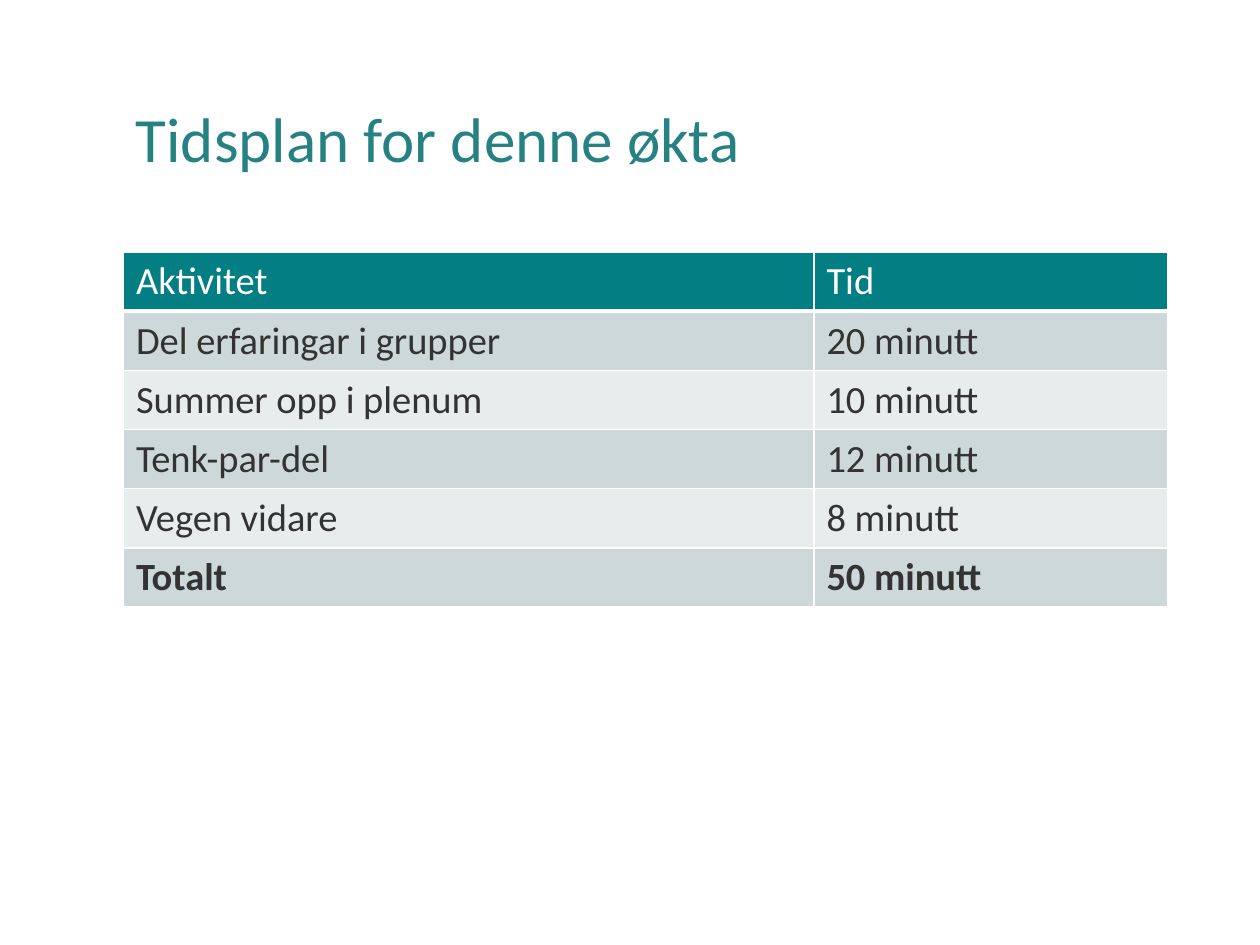
from dataclasses import dataclass

from lxml import etree
from pptx import Presentation
from pptx.dml.color import RGBColor
from pptx.enum.text import MSO_ANCHOR
from pptx.oxml.ns import qn
from pptx.util import Inches, Pt

MIDDLE = MSO_ANCHOR.MIDDLE


@dataclass(frozen=True)
class Theme:
    font: str = "Calibri"
    title_size: int = 36
    table_size: int = 22
    title: str = "268183"
    text: str = "333333"
    header: str = "037F83"
    bands: tuple = ("CCD8D9", "E7ECED")
    white: str = "FFFFFF"
    thin: int = 1
    thick: int = 3


THEME = Theme()
LEFT, WIDTH = 0.98, 8.29
COLUMN_WIDTHS = (5.48, 2.81)
ROW_HEIGHT = 0.47
ROWS = (
    ("Aktivitet", "Tid"),
    ("Del erfaringar i grupper", "20 minutt"),
    ("Summer opp i plenum", "10 minutt"),
    ("Tenk-par-del", "12 minutt"),
    ("Vegen vidare", "8 minutt"),
    ("Totalt", "50 minutt"),
)


def style_text(p, size, color, bold=False):
    p.font.name = THEME.font
    p.font.size = Pt(size)
    p.font.bold = bold
    p.font.color.rgb = RGBColor.from_string(color)


def add_title(slide, text):
    sp = slide.shapes.add_textbox(Inches(LEFT), Inches(0.4), Inches(WIDTH), Inches(1.45))
    tf = sp.text_frame
    tf.word_wrap = True
    tf.vertical_anchor = MIDDLE
    p = tf.paragraphs[0]
    p.text = text
    p.line_spacing = 0.9
    style_text(p, THEME.title_size, THEME.title)


def add_border(cell, side, width):
    tc_pr = cell._tc.get_or_add_tcPr()
    ln = etree.SubElement(tc_pr, qn(f"a:ln{side}"), w=str(Pt(width)))
    fill = etree.SubElement(ln, qn("a:solidFill"))
    etree.SubElement(fill, qn("a:srgbClr"), val=THEME.white)


def fill_cell(cell, text, row):
    is_header = row == 0
    thick_side = {0: "B", 1: "T"}.get(row)
    for side in "LRTB":
        add_border(cell, side, THEME.thick if side == thick_side else THEME.thin)
    background = THEME.header if is_header else THEME.bands[(row - 1) % 2]
    cell.fill.solid()
    cell.fill.fore_color.rgb = RGBColor.from_string(background)
    cell.text = text
    color = THEME.white if is_header else THEME.text
    style_text(cell.text_frame.paragraphs[0], THEME.table_size, color,
               bold=row == len(ROWS) - 1)


def add_schedule(slide):
    frame = slide.shapes.add_table(
        len(ROWS), len(COLUMN_WIDTHS), Inches(LEFT), Inches(2),
        Inches(WIDTH), Inches(ROW_HEIGHT * len(ROWS)))
    table = frame.table
    for column, width in zip(table.columns, COLUMN_WIDTHS):
        column.width = Inches(width)
    for row, texts in enumerate(ROWS):
        for col, text in enumerate(texts):
            fill_cell(table.cell(row, col), text, row)


def main():
    prs = Presentation()
    prs.slide_width, prs.slide_height = Inches(10), Inches(7.5)
    slide = prs.slides.add_slide(prs.slide_layouts[6])
    add_title(slide, "Tidsplan for denne økta")
    add_schedule(slide)
    prs.save("out.pptx")


if __name__ == "__main__":
    main()
